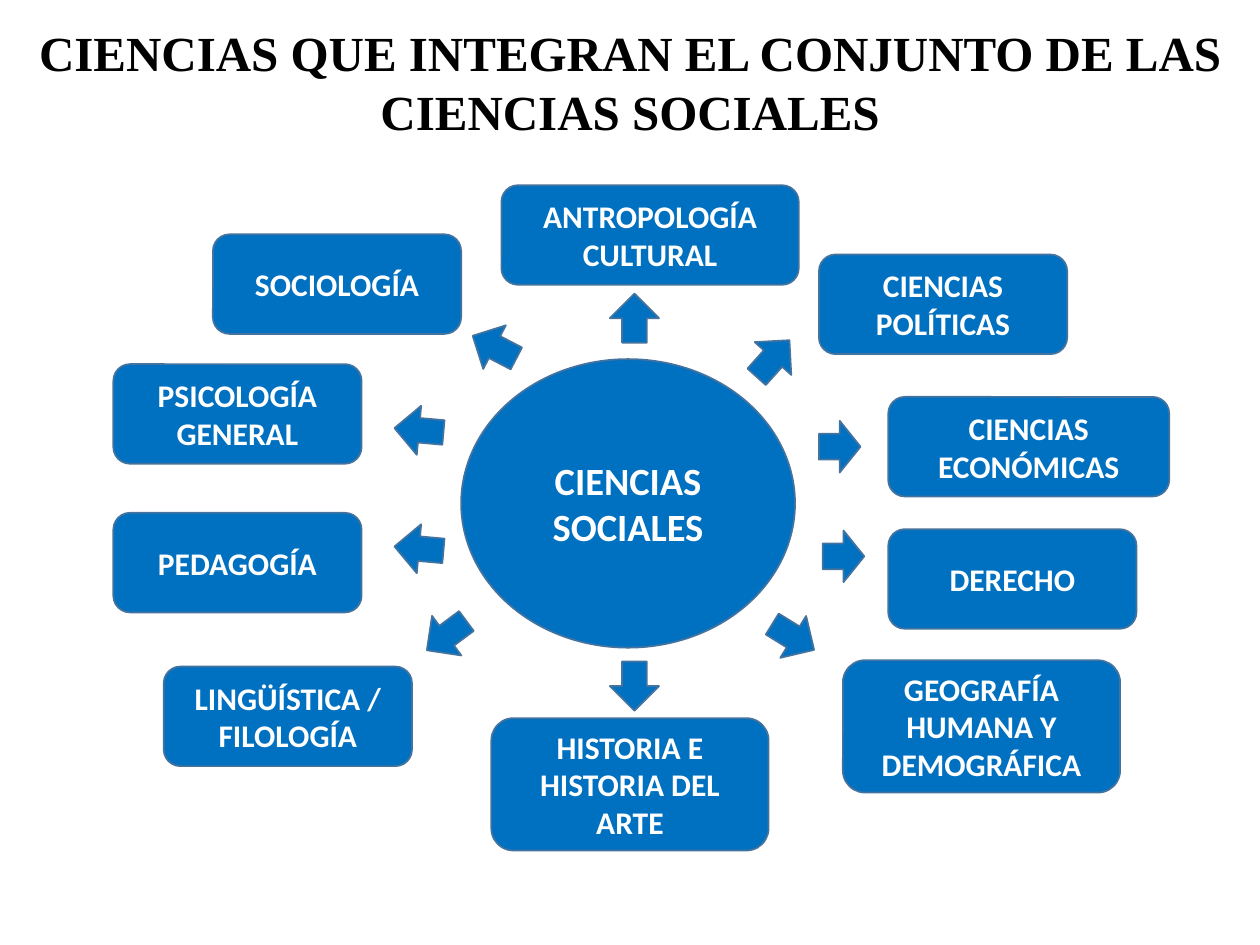
from dataclasses import dataclass

from pptx import Presentation
from pptx.dml.color import RGBColor
from pptx.enum.shapes import MSO_SHAPE as Shape
from pptx.enum.text import MSO_ANCHOR as Anchor, MSO_AUTO_SIZE as AutoSize, PP_ALIGN as Align
from pptx.util import Inches, Pt


@dataclass(frozen=True)
class Theme:
    fill: RGBColor = RGBColor(0x00, 0x70, 0xC0)
    outline: RGBColor = RGBColor(0x43, 0x73, 0x9E)
    light: RGBColor = RGBColor(0xFF, 0xFF, 0xFF)
    dark: RGBColor = RGBColor(0x00, 0x00, 0x00)
    body_font: str = "Calibri"
    title_font: str = "Times New Roman"
    title_size: int = 28
    hub_size: int = 22
    box_size: int = 18
    line_width: int = 1


@dataclass(frozen=True)
class Science:
    name: str
    left: float
    top: float
    width: float = 1.97
    height: float = 0.79


@dataclass(frozen=True)
class Arrow:
    left: float
    top: float
    rotation: float
    width: float = 0.39
    height: float = 0.39


THEME = Theme()
TITLE = "CIENCIAS QUE INTEGRAN EL CONJUNTO DE LAS CIENCIAS SOCIALES"
HUB = Science("CIENCIAS SOCIALES", 3.66, 2.85, 2.65, 2.29)
SCIENCES = [
    Science("ANTROPOLOGÍA CULTURAL", 3.98, 1.47, width=2.36),
    Science("CIENCIAS POLÍTICAS", 6.5, 2.02),
    Science("CIENCIAS ECONÓMICAS", 7.05, 3.15, width=2.23),
    Science("DERECHO", 7.05, 4.2),
    Science("GEOGRAFÍA HUMANA Y DEMOGRÁFICA", 6.69, 5.24, 2.2, 1.05),
    Science("HISTORIA E HISTORIA DEL ARTE", 3.9, 5.7, 2.2, 1.05),
    Science("LINGÜÍSTICA / FILOLOGÍA", 1.3, 5.29),
    Science("PEDAGOGÍA", 0.9, 4.07),
    Science("PSICOLOGÍA GENERAL", 0.9, 2.89),
    Science("SOCIOLOGÍA", 1.69, 1.86),
]
ARROWS = [
    Arrow(4.84, 2.33, 180),
    Arrow(5.94, 2.65, 221.9),
    Arrow(6.46, 3.38, 270, 0.41, 0.33),
    Arrow(6.49, 4.25, 270, 0.41, 0.33),
    Arrow(6.1, 4.86, 301.7),
    Arrow(4.84, 5.25, 0),
    Arrow(3.35, 4.85, 53.5),
    Arrow(3.13, 4.16, 95.1),
    Arrow(3.13, 3.22, 95.1),
    Arrow(3.73, 2.56, 117.4),
]


def write_text(sp, text: str, *, size: int, font: str = THEME.body_font,
               color: RGBColor = THEME.light, anchor: Anchor = Anchor.MIDDLE) -> None:
    """Write one bold, centred paragraph in a shape."""
    tf = sp.text_frame
    tf.word_wrap = True
    tf.auto_size = AutoSize.NONE
    tf.vertical_anchor = anchor
    p = tf.paragraphs[0]
    p.alignment = Align.CENTER
    r = p.add_run()
    r.text = text
    r.font.name = font
    r.font.size = Pt(size)
    r.font.bold = True
    r.font.color.rgb = color


def add_figure(s, kind: Shape, item: Science | Arrow):
    """Add a filled and outlined preset shape at the place of an item."""
    sp = s.shapes.add_shape(kind, Inches(item.left), Inches(item.top),
                            Inches(item.width), Inches(item.height))
    sp.shadow.inherit = False
    sp.fill.solid()
    sp.fill.fore_color.rgb = THEME.fill
    sp.line.color.rgb = THEME.outline
    sp.line.width = Pt(THEME.line_width)
    return sp


def add_science(s, kind: Shape, science: Science, size: int) -> None:
    """Add a shape labelled with the name of a science."""
    write_text(add_figure(s, kind, science), science.name, size=size)


def add_arrow(s, arrow: Arrow) -> None:
    """Add a block arrow turned away from the hub."""
    add_figure(s, Shape.DOWN_ARROW, arrow).rotation = arrow.rotation


def add_title(s) -> None:
    """Place and format the slide title."""
    sp = s.shapes.title
    sp.left, sp.top = Inches(0), Inches(0.13)
    sp.width, sp.height = Inches(10), Inches(1.04)
    write_text(sp, TITLE, size=THEME.title_size, font=THEME.title_font,
               color=THEME.dark, anchor=Anchor.TOP)


def main() -> None:
    """Build the slide and save it."""
    prs = Presentation()
    prs.slide_width, prs.slide_height = Inches(10), Inches(7.5)
    s = prs.slides.add_slide(prs.slide_layouts[5])
    add_title(s)
    add_science(s, Shape.OVAL, HUB, THEME.hub_size)
    for science in SCIENCES:
        add_science(s, Shape.ROUNDED_RECTANGLE, science, THEME.box_size)
    for arrow in ARROWS:
        add_arrow(s, arrow)
    prs.save("out.pptx")


if __name__ == "__main__":
    main()
